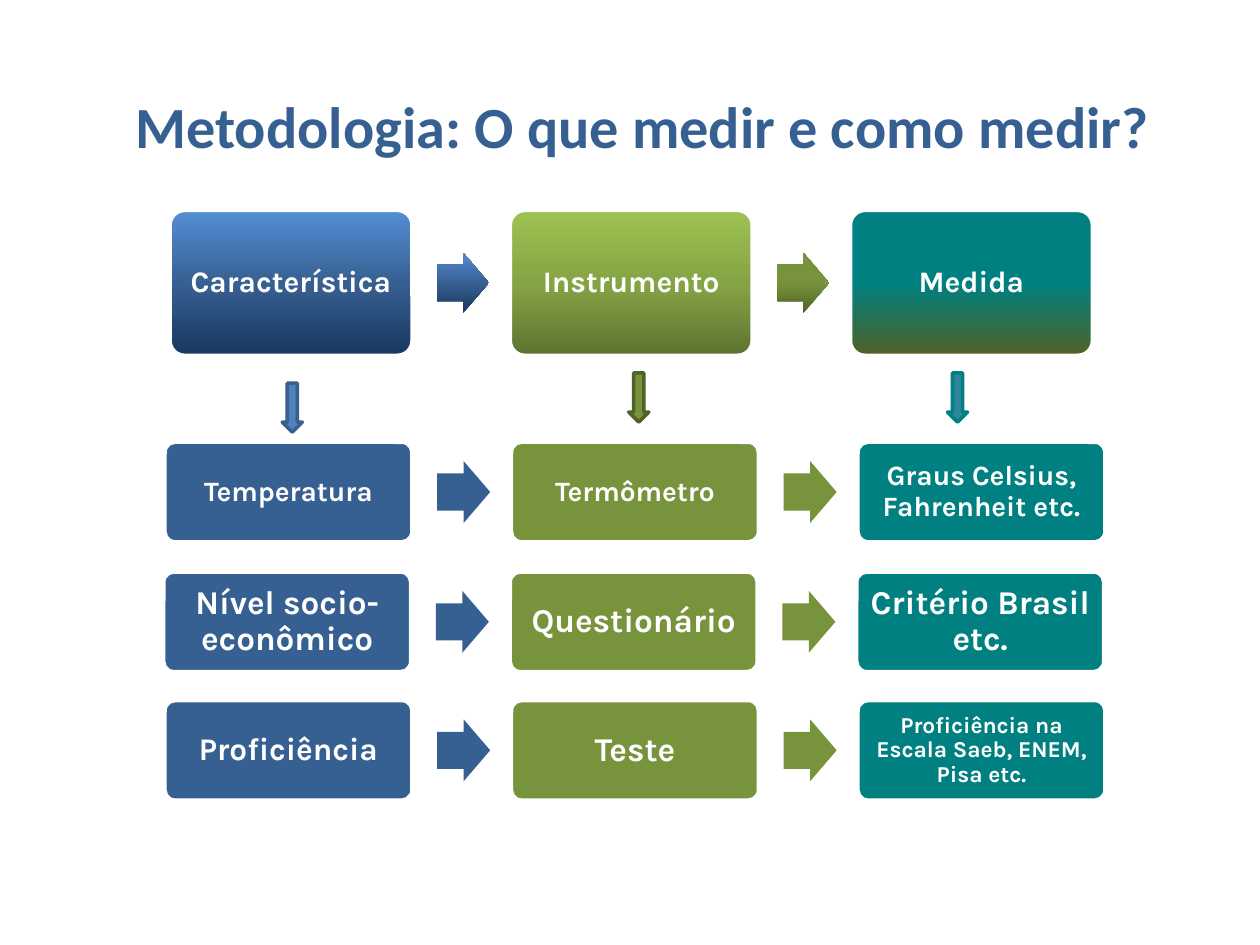
from copy import deepcopy

from pptx import Presentation
from pptx.dml.color import RGBColor
from pptx.enum.shapes import MSO_SHAPE
from pptx.enum.text import MSO_ANCHOR, PP_ALIGN
from pptx.oxml.ns import qn
from pptx.util import Inches, Pt

CARD = MSO_SHAPE.ROUNDED_RECTANGLE
RIGHT_ARROW = MSO_SHAPE.RIGHT_ARROW
DOWN_ARROW = MSO_SHAPE.DOWN_ARROW
MIDDLE = MSO_ANCHOR.MIDDLE
CENTER = PP_ALIGN.CENTER

COLORS = {
    "white": "FFFFFF", "navy": "17375E", "blue": "376092", "sky": "558ED5",
    "moss": "5D7330", "leaf": "85A445", "lime": "9EC252",
    "forest": "4F6228", "olive": "77933C", "teal": "008080",
    "soft blue": "4F81BD", "blue edge": "3A5F8C", "soft teal": "31859C",
}

TITLE = "Metodologia: O que medir e como medir?"
COLUMN_FILLS = [["blue"], ["olive"], ["teal"]]
HEADER_FILLS = [["navy", "blue", "sky"], ["moss", "leaf", "lime"], ["forest", "teal", "teal"]]
HEADER_ARROW_FILLS = [["navy", "blue", "sky"], ["forest", "olive", "olive"]]

HEADER_LAYOUT = {"width": 1.92, "height": 1.15, "pitch": 2.7, "arrow": (0.41, 0.48)}
EXAMPLE_LAYOUT = {"width": 1.96, "height": 0.79, "pitch": 2.75, "arrow": (0.42, 0.49)}

ROWS = [
    {"left": 1.35, "top": 1.67, "layout": HEADER_LAYOUT,
     "fills": HEADER_FILLS, "arrow_fills": HEADER_ARROW_FILLS,
     "cards": [("Característica", 17), ("Instrumento", 17), ("Medida", 17)]},
]
EXAMPLES = [
    (1.31, 3.51, [("Temperatura", 16), ("Termômetro", 16), ("Graus Celsius, Fahrenheit etc.", 16)]),
    (1.3, 4.54, [("Nível socio-econômico", 19), ("Questionário", 19), ("Critério Brasil etc.", 19)]),
    (1.31, 5.56, [("Proficiência", 18), ("Teste", 19),
                  ("Proficiência na Escala Saeb, ENEM, Pisa etc.", 13)]),
]
for left, top, cards in EXAMPLES:
    ROWS.append({"left": left, "top": top, "layout": EXAMPLE_LAYOUT, "fills": COLUMN_FILLS,
                 "arrow_fills": COLUMN_FILLS[:2], "cards": cards})

DOWN_ARROWS = [
    (2.24, 3.04, "soft blue", "blue edge"),
    (4.99, 2.96, "olive", "forest"),
    (7.52, 2.96, "soft teal", "teal"),
]


def color(name):
    return RGBColor.from_string(COLORS[name])


def add_filled_shape(shapes, kind, left, top, width, height, fills, line=None):
    shape = shapes.add_shape(kind, Inches(left), Inches(top), Inches(width), Inches(height))
    shape.shadow.inherit = False
    if len(fills) == 1:
        shape.fill.solid()
        shape.fill.fore_color.rgb = color(fills[0])
    else:
        shape.fill.gradient()
        shape.fill.gradient_angle = 90
        stop_list = shape.element.find(".//" + qn("a:gsLst"))
        stop_list.append(deepcopy(stop_list[-1]))
        for index, (stop, name) in enumerate(zip(shape.fill.gradient_stops, fills)):
            stop.position = index / 2
            stop.color.rgb = color(name)
    if line:
        shape.line.color.rgb = color(line)
        shape.line.width = Pt(2)
    else:
        shape.line.fill.background()
    return shape


def write_text(shape, text, font_name, size, color_name, inset):
    frame = shape.text_frame
    frame.word_wrap = True
    frame.vertical_anchor = MIDDLE
    frame.margin_left = frame.margin_right = Inches(inset)
    frame.margin_top = frame.margin_bottom = Inches(inset)
    frame.text = text
    paragraph = frame.paragraphs[0]
    paragraph.alignment = CENTER
    paragraph.font.name = font_name
    paragraph.font.size = Pt(size)
    paragraph.font.bold = True
    paragraph.font.color.rgb = color(color_name)
    return paragraph


def add_row(slide, row):
    shapes = slide.shapes.add_group_shape().shapes
    layout = row["layout"]
    arrow_width, arrow_height = layout["arrow"]
    for column, (text, size) in enumerate(row["cards"]):
        left = row["left"] + column * layout["pitch"]
        card = add_filled_shape(shapes, CARD, left, row["top"], layout["width"], layout["height"],
                                row["fills"][column], "white")
        card.adjustments[0] = 0.1
        paragraph = write_text(card, text, "Karla", size, "white", size / 250)
        paragraph.line_spacing = 0.9
        if column < len(row["arrow_fills"]):
            arrow = add_filled_shape(shapes, RIGHT_ARROW, left + layout["width"] + 0.2,
                                     row["top"] + (layout["height"] - arrow_height) / 2,
                                     arrow_width, arrow_height, row["arrow_fills"][column])
            arrow.adjustments[0] = 0.6


def main():
    presentation = Presentation()
    presentation.slide_width = Inches(10)
    presentation.slide_height = Inches(7.5)
    slide = presentation.slides.add_slide(presentation.slide_layouts[5])

    title = slide.shapes.title
    title.left, title.top = Inches(0.6), Inches(0.68)
    title.width, title.height = Inches(9), Inches(0.63)
    write_text(title, TITLE, "Calibri", 33.3, "blue", 0.05)

    for row in ROWS:
        add_row(slide, row)
    for left, top, fill, line in DOWN_ARROWS:
        add_filled_shape(slide.shapes, DOWN_ARROW, left, top, 0.16, 0.39, [fill], line)

    presentation.save("out.pptx")


if __name__ == "__main__":
    main()
